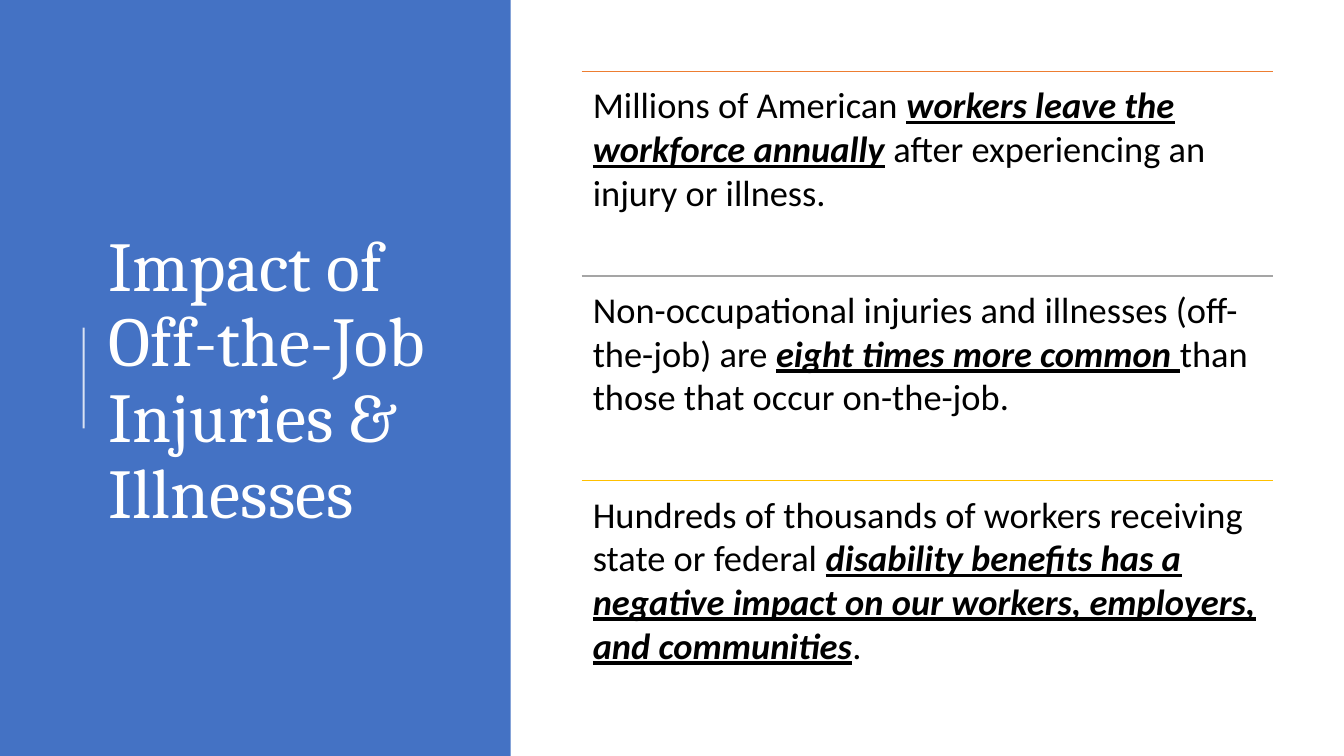
"""Builds a slide on the impact of off-the-job injuries and illnesses."""
from lxml.etree import SubElement
from pptx import Presentation
from pptx.dml.color import RGBColor
from pptx.enum.shapes import MSO_CONNECTOR, MSO_SHAPE
from pptx.enum.text import MSO_ANCHOR, MSO_AUTO_SIZE, PP_ALIGN
from pptx.oxml.ns import qn
from pptx.util import Inches, Pt

WIDE, HIGH = 13.33, 7.5
COLORS = {"panel": "4472C4", "white": "FFFFFF", "black": "000000",
          "orange": "ED7D31", "gray": "A5A5A5", "gold": "FFC000"}
TITLE = ["Impact of Off-the-Job ", "Injuries & Illnesses"]
FACTS = [
    ("orange", "Millions of American ", "workers leave the workforce annually",
     " after experiencing an injury or illness."),
    ("gray", "Non-occupational injuries and illnesses (off-the-job) are ",
     "eight times more common ", "than those that occur on-the-job."),
    ("gold", "Hundreds of thousands of workers receiving state or federal ",
     "disability benefits has a negative impact on our workers, employers, and communities",
     "."),
]
PANEL = 0.38 * WIDE
LEFT, TOP, SPAN, ROW = 5.77, 0.71, 6.86, 2.03
PAD = 0.11


def color(name):
    return RGBColor.from_string(COLORS[name])


def write(para, text, size=26, font="Calibri", tint="black", strong=False):
    run = para.add_run()
    run.text = text
    face = run.font
    face.size, face.name = Pt(size), font
    face.color.rgb = color(tint)
    face.bold = face.italic = face.underline = strong


def rule(shapes, start, end, tint, width, alpha=None):
    line = shapes.add_connector(MSO_CONNECTOR.STRAIGHT,
                                *map(Inches, (*start, *end)))
    line.line.color.rgb = color(tint)
    line.line.width = Pt(width)
    props = line.element.spPr
    if alpha:
        shade = props.find(".//" + qn("a:srgbClr"))
        SubElement(shade, qn("a:alpha")).set("val", str(alpha * 1000))
    SubElement(props, qn("a:effectLst"))


def main():
    deck = Presentation()
    deck.slide_width, deck.slide_height = Inches(WIDE), Inches(HIGH)
    slide = deck.slides.add_slide(deck.slide_layouts[5])
    shapes = slide.shapes

    panel = shapes.add_shape(MSO_SHAPE.RECTANGLE, 0, 0,
                             Inches(PANEL), Inches(HIGH))
    panel.shadow.inherit = False
    panel.fill.solid()
    panel.fill.fore_color.rgb = color("panel")
    panel.line.fill.background()

    title = shapes.title
    title.element.addprevious(panel.element)
    title.left, title.top, title.width, title.height = map(
        Inches, (0.98, 0.78, 3.74, 6.02))
    frame = title.text_frame
    frame.word_wrap, frame.auto_size = True, MSO_AUTO_SIZE.NONE
    frame.vertical_anchor = MSO_ANCHOR.MIDDLE
    head = frame.paragraphs[0]
    head.alignment, head.line_spacing = PP_ALIGN.LEFT, 0.9
    for i, part in enumerate(TITLE):
        if i:
            head.add_line_break()
        write(head, part, size=50, font="Cambria", tint="white")
    rule(shapes, (0.83, 4.25), (0.83, 3.25), "white", 1.5, alpha=80)

    group = shapes.add_group_shape().shapes
    for i, (tint, before, key, after) in enumerate(FACTS):
        y = TOP + i * ROW
        rule(group, (LEFT, y), (LEFT + SPAN, y), tint, 1)
        box = group.add_textbox(*map(Inches, (LEFT, y, SPAN, ROW)))
        frame = box.text_frame
        frame.word_wrap = True
        frame.margin_left = frame.margin_right = Inches(PAD)
        frame.margin_top = frame.margin_bottom = Inches(PAD)
        para = frame.paragraphs[0]
        write(para, before)
        write(para, key, strong=True)
        write(para, after)

    deck.save("out.pptx")


if __name__ == "__main__":
    main()
